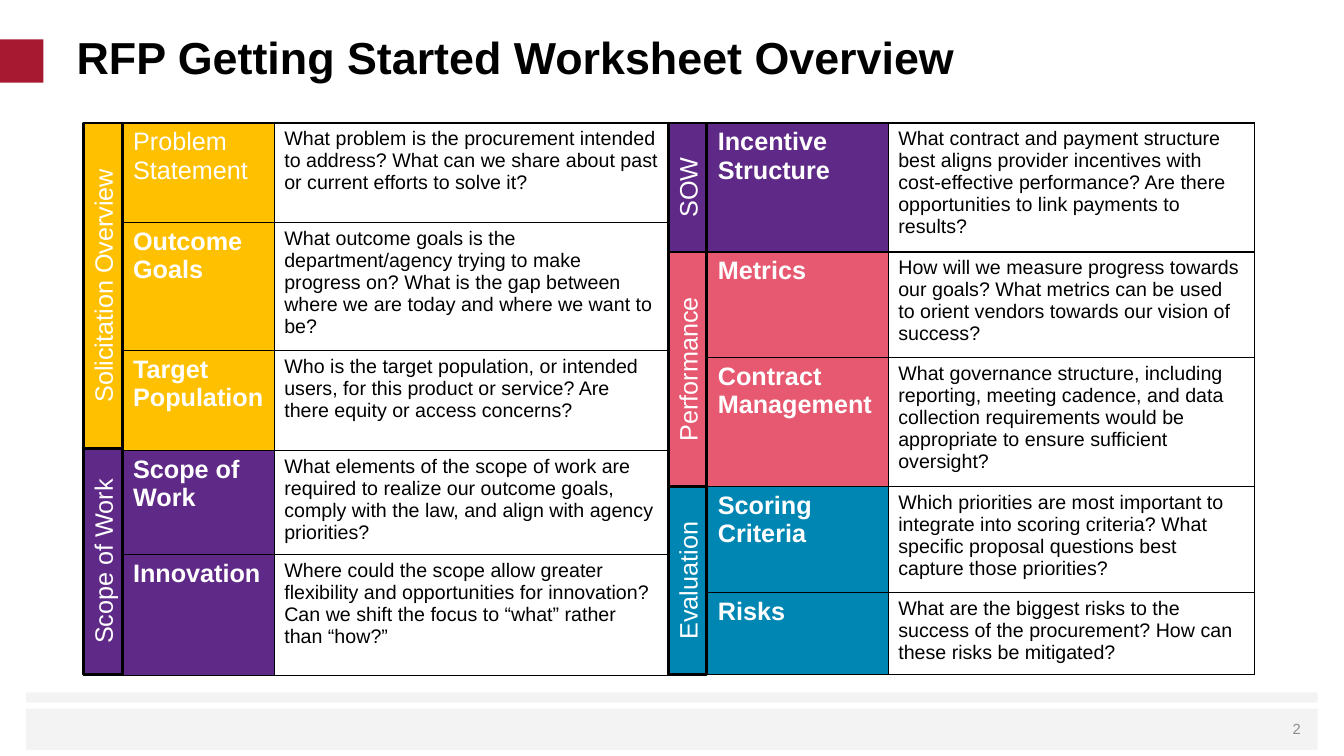
from pptx import Presentation
from pptx import util as u
from pptx.dml.color import RGBColor
from pptx.enum import shapes, text
from pptx.oxml import parse_xml
from pptx.oxml.ns import nsdecls

# Content: each half is a table with groups of (label, colour, bar length, rows);
# each row is (topic, question, height)
TITLE = "RFP Getting Started Worksheet Overview"
GOLD, PLUM, ROSE, TEAL = "FFC000", "5F2987", "E65970", "0086B3"
LEFT = [
    ("Solicitation Overview", GOLD, 323, [
        ("Problem Statement", "What problem is the procurement intended to address? What can we share about past or current efforts to solve it?", 99),
        ("Outcome Goals", "What outcome goals is the department/agency trying to make progress on? What is the gap between where we are today and where we want to be?", 121),
        ("Target Population", "Who is the target population, or intended users, for this product or service? Are there equity or access concerns?", 99),
    ]),
    ("Scope of Work", PLUM, 224, [
        ("Scope of Work", "What elements of the scope of work are required to realize our outcome goals, comply with the law, and align with agency priorities?", 99),
        ("Innovation", "Where could the scope allow greater flexibility and opportunities for innovation? Can we shift the focus to “what” rather than “how?”", 120),
    ]),
]
RIGHT = [
    ("SOW", PLUM, 128, [
        ("Incentive Structure", "What contract and payment structure best aligns provider incentives with cost-effective performance? Are there opportunities to link payments to results?", 128),
    ]),
    ("Performance", ROSE, 233, [
        ("Metrics", "How will we measure progress towards our goals? What metrics can be used to orient vendors towards our vision of success?", 105),
        ("Contract Management", "What governance structure, including reporting, meeting cadence, and data collection requirements would be appropriate to ensure sufficient oversight?", 128),
    ]),
    ("Evaluation", TEAL, 186, [
        ("Scoring Criteria", "Which priorities are most important to integrate into scoring criteria? What specific proposal questions best capture those priorities?", 105),
        ("Risks", "What are the biggest risks to the success of the procurement? How can these risks be mitigated?", 81),
    ]),
]
# (groups, bar left, table left, column widths)
HALVES = [(LEFT, 83, 122, (150, 391)), (RIGHT, 663, 702, (179, 363))]
DECOR = [(26, 687, 1281, 10, "F3F3F3"), (26, 703, 1281, 41, "F3F3F3"), (0, 39, 43, 43, "A71930")]
TOP, BAR = 122, 38
PLAIN = {"Problem Statement"}


def px(n):
    return u.Emu(round(n * 9144))


def rgb(code):
    return RGBColor.from_string(code)


def style(frame, size, color, bold=False, align=text.PP_ALIGN.LEFT):
    for para in frame.paragraphs:
        para.alignment = align
        for run in para.runs:
            font = run.font
            font.name, font.size, font.bold = "Arial", u.Pt(size), bold
            font.color.rgb = rgb(color)


def box(x, y, w, h, color):
    rect = slide.shapes.add_shape(shapes.MSO_SHAPE.RECTANGLE, px(x), px(y), px(w), px(h))
    rect.shadow.inherit = False
    rect.fill.solid()
    rect.fill.fore_color.rgb = rgb(color)
    rect.line.fill.background()
    return rect


def fill(cell, words, size, ink, color, bold):
    cell.text_frame.text = words
    style(cell.text_frame, size, ink, bold)
    for side in ("lnL", "lnR", "lnT", "lnB"):
        cell._tc.get_or_add_tcPr().append(parse_xml(
            f'<a:{side} {nsdecls("a")} w="12700"><a:solidFill>'
            f'<a:srgbClr val="000000"/></a:solidFill></a:{side}>'))
    cell.fill.solid()
    cell.fill.fore_color.rgb = rgb(color)


deck = Presentation()
deck.slide_width, deck.slide_height = px(1333), px(750)
slide = deck.slides.add_slide(deck.slide_layouts[5])

# Footer bands and title marker
for band in DECOR:
    box(*band)

# Title
head = slide.shapes.title
head.left, head.top, head.width, head.height = px(66), px(29), px(1200), px(59)
frame = head.text_frame
frame.text = TITLE
frame.auto_size = text.MSO_AUTO_SIZE.NONE
frame.vertical_anchor = text.MSO_ANCHOR.BOTTOM
frame.margin_top, frame.margin_bottom = 0, px(5)
style(frame, 32, "000000", True)

# Page number
page = slide.shapes.add_textbox(px(1225), px(703), px(75), px(40)).text_frame
page.text = "2"
page.word_wrap = True
page.vertical_anchor = text.MSO_ANCHOR.MIDDLE
style(page, 10.5, "8C8C8C", align=text.PP_ALIGN.RIGHT)

for groups, edge, left, widths in HALVES:
    # Topic table
    rows = [(row, color) for _, color, _, part in groups for row in part]
    tall = sum(row[2] for row, _ in rows)
    grid = slide.shapes.add_table(len(rows), 2, px(left), px(TOP), px(sum(widths)), px(tall)).table
    grid.first_row = grid.horz_banding = False
    for col, width in zip(grid.columns, widths):
        col.width = px(width)
    for i, ((topic, ask, high), color) in enumerate(rows):
        grid.rows[i].height = px(high)
        fill(grid.cell(i, 0), topic, 18, "FFFFFF", color, topic not in PLAIN)
        fill(grid.cell(i, 1), ask, 14, "000000", "FFFFFF", False)

    # Group bars, stacked downwards and turned to read upwards
    y = TOP
    for label, color, size, _ in groups:
        bar = box(edge + (BAR - size) / 2, y + (size - BAR) / 2, size, BAR, color)
        bar.rotation = 270
        bar.line.color.rgb = rgb("000000")
        bar.line.width = u.Pt(2)
        bar.text_frame.text = label
        bar.text_frame.vertical_anchor = text.MSO_ANCHOR.MIDDLE
        style(bar.text_frame, 18, "FFFFFF", align=text.PP_ALIGN.CENTER)
        y += size

deck.save("out.pptx")
